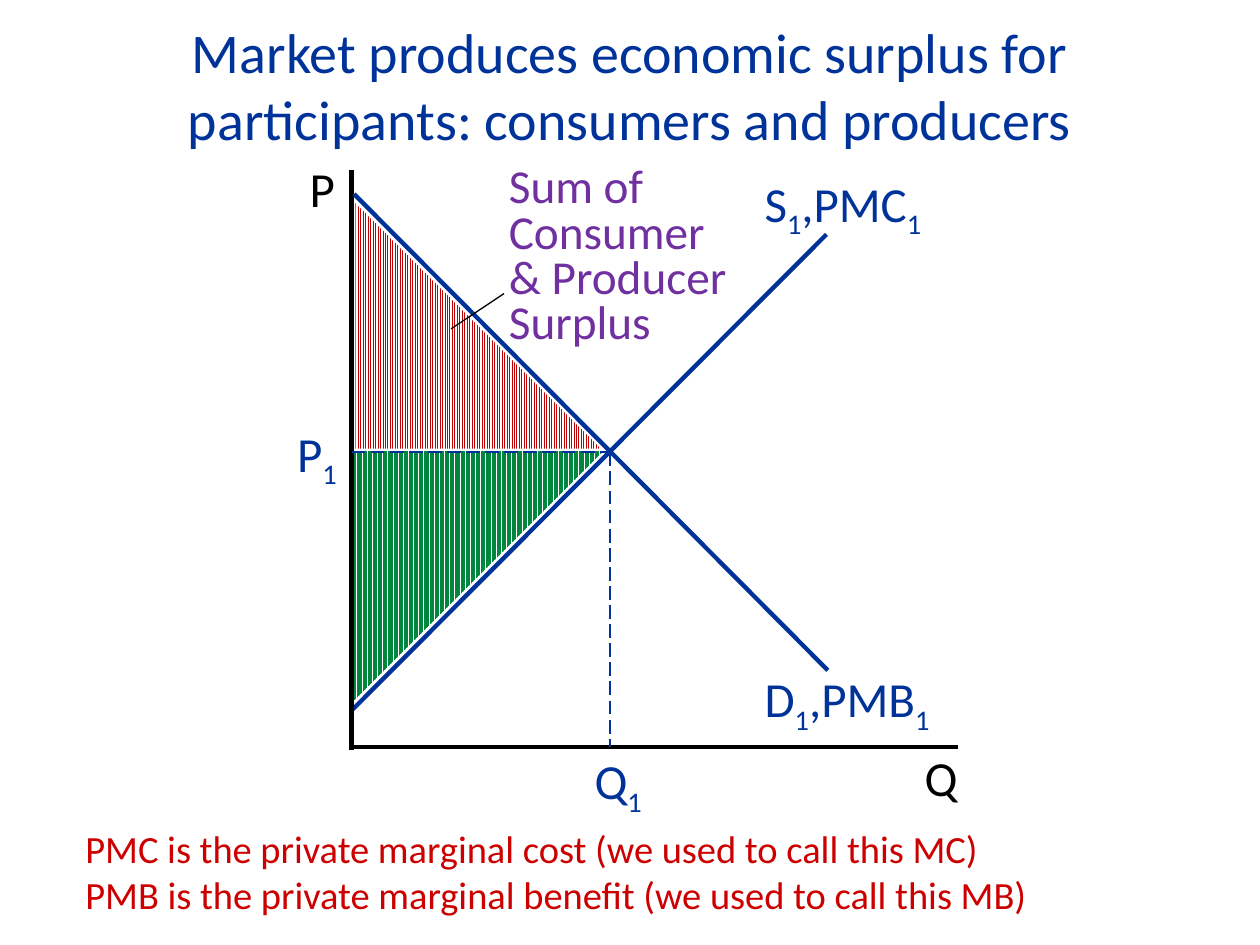
from lxml.etree import SubElement
from pptx import Presentation
from pptx.dml.color import RGBColor
from pptx.enum.dml import MSO_LINE, MSO_PATTERN
from pptx.enum.shapes import MSO_CONNECTOR, MSO_SHAPE
from pptx.enum.text import MSO_ANCHOR, PP_ALIGN
from pptx.oxml.ns import qn
from pptx.util import Inches, Pt

COLUMNS, ROWS = 100, 75
SLIDE_WIDTH, SLIDE_HEIGHT = Inches(10), Inches(7.5)
FONT = "Calibri"
COLORS = {
    "blue": "003399",
    "black": "000000",
    "purple": "7030A0",
    "red": "CC0000",
    "consumer": "C00000",
    "producer": "00863D",
    "white": "FFFFFF",
}
AXIS_X, AXIS_Y = 27.9, 59.3
QUANTITY, PRICE = 48.4, 35.9


def color(name):
    return RGBColor.from_string(COLORS[name])


def across(columns):
    return round(SLIDE_WIDTH * columns / COLUMNS)


def down(rows):
    return round(SLIDE_HEIGHT * rows / ROWS)


def box(left, top, width, height):
    return across(left), down(top), across(width), down(height)


def format_run(run, size, color_name):
    run.font.name = FONT
    run.font.size = Pt(size)
    run.font.color.rgb = color(color_name)


def add_title(slide, text):
    title = slide.shapes.title
    title.left, title.top, title.width, title.height = box(7, 0.8, 86, 11.8)
    title.text_frame.text = text
    title.text_frame.vertical_anchor = MSO_ANCHOR.MIDDLE
    paragraph = title.text_frame.paragraphs[0]
    paragraph.alignment = PP_ALIGN.CENTER
    format_run(paragraph.runs[0], 32, "blue")


def add_text(slide, place, lines, color_name, size=28, spacing=None):
    text_frame = slide.shapes.add_textbox(*box(*place)).text_frame
    text_frame.word_wrap = True
    for index, line in enumerate(lines):
        paragraph = text_frame.add_paragraph() if index else text_frame.paragraphs[0]
        paragraph.line_spacing = spacing
        for position, piece in enumerate(line.split("_")):
            if not piece:
                continue
            run = paragraph.add_run()
            run.text = piece
            format_run(run, size, color_name)
            if position % 2:
                run.font._element.set("baseline", "-25000")


def add_line(slide, start, end, color_name, width=2.5, dashed=False):
    connector = slide.shapes.add_connector(
        MSO_CONNECTOR.STRAIGHT,
        across(start[0]), down(start[1]), across(end[0]), down(end[1]),
    )
    connector.line.color.rgb = color(color_name)
    connector.line.width = Pt(width)
    if dashed:
        connector.line.dash_style = MSO_LINE.LONG_DASH
    SubElement(connector._element.spPr, qn("a:effectLst"))


def add_surplus(slide, place, pattern, color_name, rotation=0):
    shape = slide.shapes.add_shape(MSO_SHAPE.RIGHT_TRIANGLE, *box(*place))
    shape.rotation = rotation
    shape.shadow.inherit = False
    shape.fill.patterned()
    shape.fill.pattern = pattern
    shape.fill.fore_color.rgb = color(color_name)
    shape.fill.back_color.rgb = color("white")
    shape.line.fill.background()


def add_surplus_areas(slide):
    add_surplus(slide, (28.1, 35.8, 19.8, 19.8), MSO_PATTERN.DARK_VERTICAL, "producer", 90)
    add_surplus(slide, (28.2, 16.1, 19.5, 19.5), MSO_PATTERN.LIGHT_VERTICAL, "consumer")


def add_curves(slide):
    add_line(slide, (AXIS_X, 56.4), (65.6, 18.6), "blue")
    add_line(slide, (AXIS_X, 13.5), (AXIS_X, 59.5), "black")
    add_line(slide, (AXIS_X, AXIS_Y), (76, AXIS_Y), "black")
    add_line(slide, (28.1, 15.4), (65.7, 53.2), "blue")
    for foot in ((AXIS_X, PRICE), (QUANTITY, AXIS_Y)):
        start, end = sorted((foot, (QUANTITY, PRICE)))
        add_line(slide, start, end, "blue", 1, dashed=True)


def add_labels(slide):
    add_text(slide, (59.7, 52.6, 15.8, 5.7), ["D_1_,PMB_1"], "blue")
    add_text(slide, (59.7, 13.3, 15.5, 5.7), ["S_1_,PMC_1"], "blue")
    add_text(slide, (72.4, 58.8, 5.1, 5.7), ["Q"], "black")
    add_text(slide, (23.6, 13, 4.5, 4.9), ["P"], "black", spacing=0.8)
    add_text(slide, (22.6, 33.6, 5.8, 4.9), ["P_1"], "blue", spacing=0.8)
    add_text(slide, (46.2, 59.6, 7.5, 4.8), ["Q_1"], "blue", spacing=0.8)


def add_notes_on_chart(slide):
    add_line(slide, (40, 23.3), (35.8, 26.1), "black", 0.75)
    add_text(slide, (39.4, 12.8, 23.3, 16.2),
             ["Sum of Consumer", "& Producer Surplus"], "purple", 27, 0.8)
    add_text(slide, (5.8, 65, 88.3, 8.4),
             ["PMC is the private marginal cost (we used to call this MC)",
              "PMB is the private marginal benefit (we used to call this MB)"],
             "red", 22)


def main():
    presentation = Presentation()
    presentation.slide_width, presentation.slide_height = SLIDE_WIDTH, SLIDE_HEIGHT
    slide = presentation.slides.add_slide(presentation.slide_layouts[5])
    add_title(slide, "Market produces economic surplus for participants: consumers and producers")
    add_surplus_areas(slide)
    add_curves(slide)
    add_labels(slide)
    add_notes_on_chart(slide)
    presentation.save("out.pptx")


if __name__ == "__main__":
    main()
